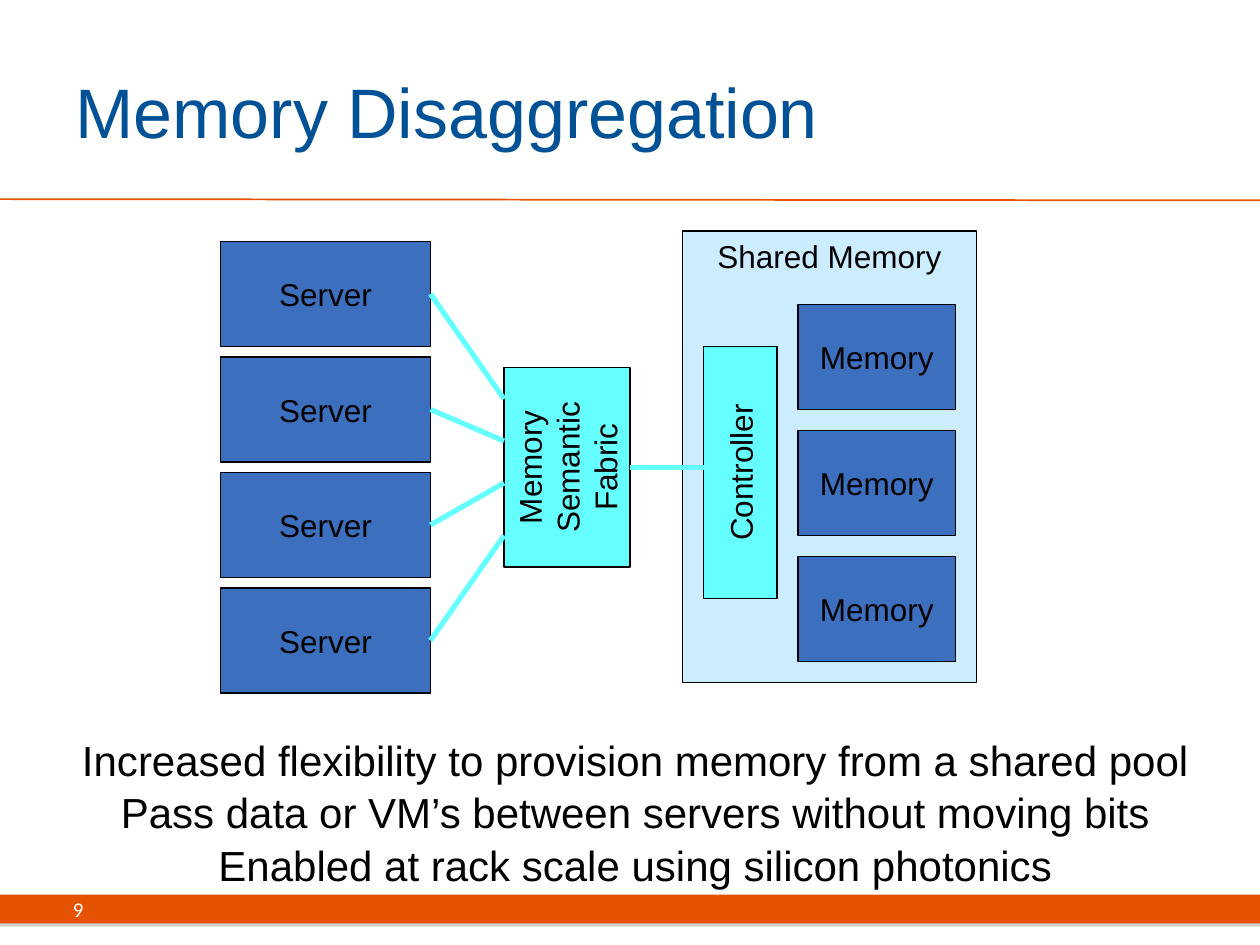
from lxml import etree
from pptx import Presentation
from pptx.dml.color import RGBColor
from pptx.enum import shapes, text
from pptx.oxml import parse_xml
from pptx.oxml.ns import nsdecls, qn
from pptx.util import Pt

BLACK = RGBColor(0, 0, 0)
WHITE = RGBColor(255, 255, 255)
ORANGE = RGBColor(0xE5, 0x53, 0x02)
NAVY = RGBColor(0x00, 0x51, 0x95)
BLUE = RGBColor(0x3C, 0x6F, 0xBD)
PALE = RGBColor(0xCC, 0xEC, 0xFF)
CYAN = RGBColor(0x66, 0xFF, 0xFF)

prs = Presentation()
prs.slide_width, prs.slide_height = Pt(720), Pt(540)
s = prs.slides.add_slide(prs.slide_layouts[6])


def write(sp, lines, size=18, color=BLACK, font="Arial", center=True, middle=True, wrap=True):
    tf = sp.text_frame
    tf.word_wrap = wrap
    tf.vertical_anchor = text.MSO_ANCHOR.MIDDLE if middle else text.MSO_ANCHOR.TOP
    tf.text = "\n".join(lines)
    for i, p in enumerate(tf.paragraphs):
        p.alignment = text.PP_ALIGN.CENTER if center else text.PP_ALIGN.LEFT
        p.space_before = Pt(1.2 if i else 0)
        p.font.size, p.font.name = Pt(size), font
        p.font.color.rgb = color


def connect(x1, y1, x2, y2, color, width):
    c = s.shapes.add_connector(shapes.MSO_CONNECTOR.STRAIGHT, Pt(x1), Pt(y1), Pt(x2), Pt(y2))
    c.line.color.rgb, c.line.width = color, Pt(width)
    etree.SubElement(c._element.spPr, qn("a:effectLst"))


bar = s.shapes.add_shape(shapes.MSO_SHAPE.RECTANGLE, 0, Pt(511.2), Pt(720), Pt(16.5))
bar.fill.solid()
bar.fill.fore_color.rgb = ORANGE
bar.line.fill.background()
bar._element.spPr.append(parse_xml(
    f'<a:effectLst {nsdecls("a")}><a:outerShdw dist="22860" dir="5400000" rotWithShape="0">'
    '<a:srgbClr val="808080"><a:alpha val="35000"/></a:srgbClr></a:outerShdw></a:effectLst>'))
connect(0, 113.8, 720, 114.5, ORANGE, 1)

title = s.shapes.add_textbox(Pt(36), Pt(18), Pt(588), Pt(90))
write(title, ["Memory Disaggregation"], 40, NAVY, center=False)
number = s.shapes.add_textbox(Pt(34.5), Pt(511.2), Pt(651.6), Pt(16.5))
write(number, ["9"], 12, WHITE, "Calibri", center=False)

boxes = [("Server", 126, 138 + 66 * i, 120, 60, BLUE) for i in range(4)]
boxes.append(("", 390, 132, 168, 258, PALE))
boxes += [("Memory", 456, 174 + 72 * i, 90, 60, BLUE) for i in range(3)]
boxes += [("Controller", 402, 198, 42, 144, CYAN),
          ("Memory Semantic Fabric", 288, 210, 72, 114, CYAN)]
for label, x, y, w, h, color in boxes:
    sp = s.shapes.add_shape(shapes.MSO_SHAPE.RECTANGLE, Pt(x), Pt(y), Pt(w), Pt(h))
    sp.shadow.inherit = False
    sp.fill.solid()
    sp.fill.fore_color.rgb = color
    sp.line.color.rgb, sp.line.width = BLACK, Pt(0.75)
    if label:
        write(sp, [label])
    if color == CYAN:
        sp.text_frame._txBody.bodyPr.set("vert", "vert270")

heading = s.shapes.add_textbox(Pt(402), Pt(132), Pt(144), Pt(29))
write(heading, ["Shared Memory"], middle=False, wrap=False)

for i, y in enumerate([228, 252, 276, 306]):
    connect(246, 168 + 66 * i, 288, y, CYAN, 3)
connect(360, 267, 414, 267, CYAN, 3)

summary = s.shapes.add_textbox(Pt(36), Pt(416), Pt(654), Pt(94))
write(summary, ["Increased flexibility to provision memory from a shared pool",
                "Pass data or VM’s between servers without moving bits",
                "Enabled at rack scale using silicon photonics"], 24, middle=False)

prs.save("out.pptx")
